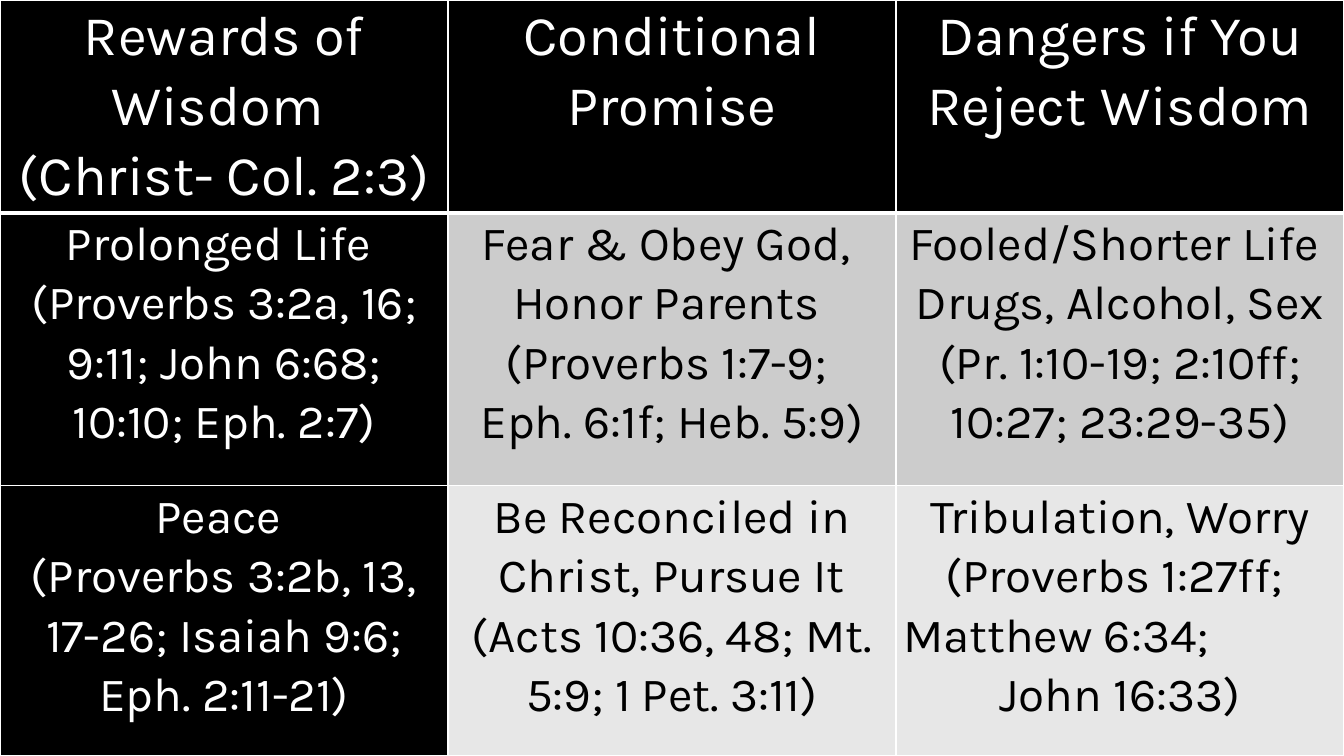
from lxml import etree
from pptx import Presentation
from pptx import util as u
from pptx.dml.color import RGBColor
from pptx.enum import text
from pptx.oxml import ns

BLACK = RGBColor(0x00, 0x00, 0x00)
WHITE = RGBColor(0xFF, 0xFF, 0xFF)
GREY = RGBColor(0xCC, 0xCC, 0xCC)
LIGHT_GREY = RGBColor(0xE7, 0xE7, 0xE7)
CENTER, LEFT = text.PP_ALIGN.CENTER, text.PP_ALIGN.LEFT

ROW_HEIGHTS = [5.36, 6.88, 6.81]
ROW_FILLS = [BLACK, GREY, LIGHT_GREY]
ROWS = [
    [
        ["Rewards of Wisdom ", "(Christ- Col. 2:3)"],
        ["Conditional Promise"],
        ["Dangers if You Reject Wisdom"],
    ],
    [
        ["Prolonged Life ", "(Proverbs 3:2a, 16; 9:11; John 6:68; 10:10; Eph. 2:7)"],
        ["Fear & Obey God, ", "Honor Parents ", "(Proverbs 1:7-9; ",
         "Eph. 6:1f; Heb. 5:9)"],
        ["Fooled/Shorter Life ",
         "Drugs, Alcohol, Sex (Pr. 1:10-19; 2:10ff; 10:27; 23:29-35)"],
    ],
    [
        ["Peace ", "(Proverbs 3:2b, 13, 17-26; Isaiah 9:6; Eph. 2:11-21)"],
        ["Be Reconciled in Christ, Pursue It (Acts 10:36, 48; Mt. 5:9; 1 Pet. 3:11)"],
        ["Tribulation, Worry", "(Proverbs 1:27ff; ", "Matthew 6:34;", "John 16:33)"],
    ],
]
LEFT_ALIGNED = {"Matthew 6:34;"}


def add_border(cell, side, width):
    """Draw a white line, width in points, on one side: L, R, T or B."""
    tc_pr = cell._tc.get_or_add_tcPr()
    ln = etree.SubElement(tc_pr, ns.qn("a:ln" + side), w=str(u.Pt(width)))
    fill = etree.SubElement(ln, ns.qn("a:solidFill"))
    etree.SubElement(fill, ns.qn("a:srgbClr"), val=str(WHITE))


prs = Presentation()
prs.slide_width, prs.slide_height = u.Cm(33.87), u.Cm(19.05)
s = prs.slides.add_slide(prs.slide_layouts[6])

table = s.shapes.add_table(
    3, 3, 0, 0, prs.slide_width, u.Cm(sum(ROW_HEIGHTS))).table
table.horz_banding = False
for column in table.columns:
    column.width = u.Cm(11.29)

for i, row in enumerate(ROWS):
    table.rows[i].height = u.Cm(ROW_HEIGHTS[i])
    for j, paragraphs in enumerate(row):
        cell = table.cell(i, j)
        for side in "LRTB":
            header_edge = (i, side) in [(0, "B"), (1, "T")]
            add_border(cell, side, 3 if header_edge else 1)
        cell.fill.solid()
        cell.fill.fore_color.rgb = BLACK if j == 0 else ROW_FILLS[i]
        cell.margin_left = cell.margin_right = u.Cm(0.18)
        cell.margin_top = cell.margin_bottom = 0

        tf = cell.text_frame
        for k, line in enumerate(paragraphs):
            p = tf.add_paragraph() if k else tf.paragraphs[0]
            p.alignment = LEFT if line in LEFT_ALIGNED else CENTER
            p.line_spacing = 1.07
            r = p.add_run()
            r.text = line
            r.font.name = "Karla"
            r.font.size = u.Pt(40 if i == 0 else 34)
            r.font.bold = False
            r.font.color.rgb = WHITE if i == 0 or j == 0 else BLACK

prs.save("out.pptx")
